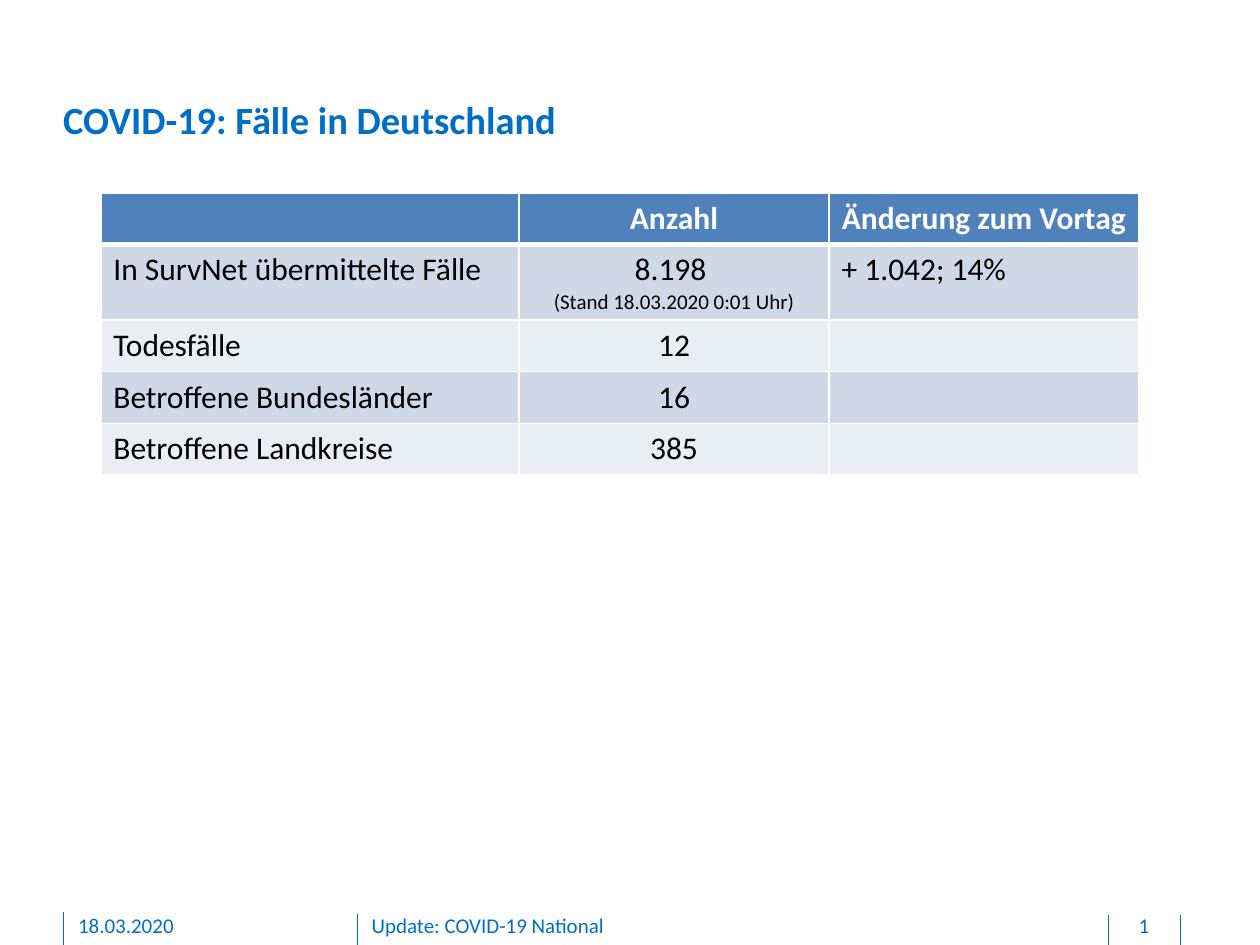
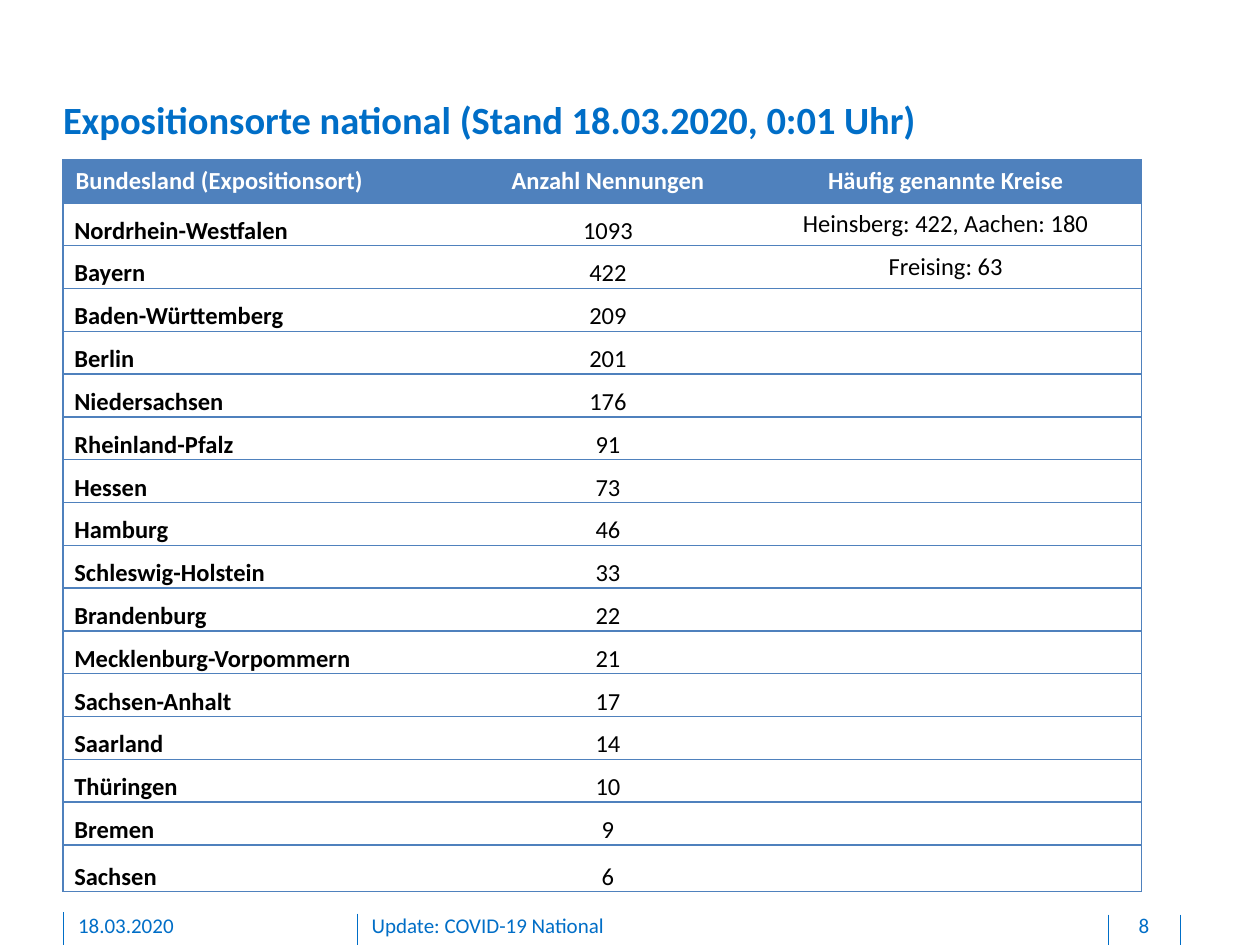
from lxml.etree import SubElement
from pptx import Presentation
from pptx.dml.color import RGBColor
from pptx.enum.shapes import MSO_CONNECTOR
from pptx.enum.text import MSO_ANCHOR, PP_ALIGN
from pptx.oxml.ns import qn
from pptx.util import Inches, Pt

FONT = "Calibri"
BLUE = RGBColor(0x00, 0x6E, 0xC7)
STEEL = RGBColor(0x4F, 0x81, 0xBD)
BAND = RGBColor(0xD0, 0xD8, 0xE8)
PALE = RGBColor(0xE9, 0xED, 0xF4)
WHITE = RGBColor(0xFF, 0xFF, 0xFF)
BLACK = RGBColor(0x00, 0x00, 0x00)
LEFT, MID = PP_ALIGN.LEFT, PP_ALIGN.CENTER
PLAIN_STYLE = "{2D5ABB26-0587-4C30-8999-92F81FD0307C}"

DATE = "18.03.2020"
TOPIC = "Update: COVID-19 National"
# x and top of each upright rule in the footer
RULES = [(0.5, 7.24), (2.84, 7.25), (8.8, 7.26), (9.37, 7.26)]

CASES = [
    ("", "Anzahl", "Änderung zum Vortag"),
    ("In SurvNet übermittelte Fälle",
     [("8.198 ", 18), ("(Stand 18.03.2020 0:01 Uhr)", 12)], "+ 1.042; 14%"),
    ("Todesfälle", "12", ""),
    ("Betroffene Bundesländer", "16", ""),
    ("Betroffene Landkreise", "385", ""),
]
PLACES = [
    ("Bundesland (Expositionsort)", "Anzahl Nennungen", "Häufig genannte Kreise"),
    ("Nordrhein-Westfalen", "1093", "Heinsberg: 422, Aachen: 180"),
    ("Bayern", "422", "Freising: 63"),
    ("Baden-Württemberg", "209", ""),
    ("Berlin", "201", ""),
    ("Niedersachsen", "176", ""),
    ("Rheinland-Pfalz", "91", ""),
    ("Hessen", "73", ""),
    ("Hamburg", "46", ""),
    ("Schleswig-Holstein", "33", ""),
    ("Brandenburg", "22", ""),
    ("Mecklenburg-Vorpommern", "21", ""),
    ("Sachsen-Anhalt", "17", ""),
    ("Saarland", "14", ""),
    ("Thüringen", "10", ""),
    ("Bremen", "9", ""),
    ("Sachsen", "6", ""),
]


def write(frame, text, size=12, color=BLUE, bold=False, align=LEFT):
    """Fill a frame with one text, or with a list of (text, size) paragraphs."""
    parts = [(text, size)] if isinstance(text, str) else text
    for i, (words, points) in enumerate(parts):
        para = frame.add_paragraph() if i else frame.paragraphs[0]
        para.alignment = align
        if not words:
            # keeps an empty cell from stretching its row
            SubElement(para._p, qn("a:endParaRPr"), sz=str(points * 100))
            continue
        run = para.add_run()
        run.text = words
        font = run.font
        font.name, font.size, font.bold = FONT, Pt(points), bold
        font.color.rgb = color


def edge(cell, **sides):
    """Draw the cell borders; each side is (colour, points) or None for no line."""
    props = cell._tc.get_or_add_tcPr()
    for side in "LRTB":
        look = sides.get(side)
        line = SubElement(props, qn(f"a:ln{side}"))
        if look:
            color, points = look
            line.set("w", str(Pt(points)))
            fill = SubElement(line, qn("a:solidFill"))
            SubElement(fill, qn("a:srgbClr"), val=str(color))
        else:
            SubElement(line, qn("a:noFill"))


def paint(cell, color):
    cell.fill.solid()
    cell.fill.fore_color.rgb = color


def pad(item, left=0, top=0, right=0, bottom=0):
    item.margin_left, item.margin_top = Inches(left), Inches(top)
    item.margin_right, item.margin_bottom = Inches(right), Inches(bottom)


class Deck:
    def __init__(self):
        self.prs = Presentation()
        self.prs.slide_width, self.prs.slide_height = Inches(10), Inches(7.5)
        self.slide = None

    def page(self, title, number):
        """Start a slide with its title and footer."""
        self.slide = self.prs.slides.add_slide(self.prs.slide_layouts[6])
        for x, top in RULES:
            self.rule(x, top, 7.5)
        self.text(title, 0.5, 0.76, 8.85, 0.37, size=22, bold=True)
        self.foot(DATE, 0.62, 2.03)
        self.foot(TOPIC, 2.95, 5.67)
        self.foot(str(number), 8.81, 0.54, align=MID)

    def rule(self, x, top, end):
        line = self.slide.shapes.add_connector(
            MSO_CONNECTOR.STRAIGHT, Inches(x), Inches(top), Inches(x), Inches(end))
        line.line.color.rgb = BLUE
        line.line.width = Pt(0.5)
        SubElement(line._element.spPr, qn("a:effectLst"))

    def text(self, text, x, y, w, h, bottom=0, **style):
        box = self.slide.shapes.add_textbox(Inches(x), Inches(y), Inches(w), Inches(h))
        frame = box.text_frame
        frame.word_wrap = True
        pad(frame, bottom=bottom)
        write(frame, text, **style)

    def foot(self, text, x, w, **style):
        self.text(text, x, 7.24, w, 0.21, bottom=0.05, **style)

    def table(self, x, y, cols, rows):
        """Add an unstyled table with the given column widths and row heights."""
        table = self.slide.shapes.add_table(
            len(rows), len(cols), Inches(x), Inches(y),
            Inches(sum(cols)), Inches(sum(rows))).table
        table.horz_banding = False
        table._tbl.tblPr.find(qn("a:tableStyleId")).text = PLAIN_STYLE
        for col, width in zip(table.columns, cols):
            col.width = Inches(width)
        for row, height in zip(table.rows, rows):
            row.height = Inches(height)
        return table

    def cases(self):
        table = self.table(0.8, 1.53, [3.32, 2.46, 2.46], [0.41, 0.6] + [0.41] * 3)
        thin, thick = (WHITE, 1), (WHITE, 3)
        for r, row in enumerate(CASES):
            head = r == 0
            for c, words in enumerate(row):
                cell = table.cell(r, c)
                edge(cell, L=thin, R=thin, T=thick if r == 1 else thin,
                     B=thick if head else thin)
                paint(cell, STEEL if head else BAND if r % 2 else PALE)
                write(cell.text_frame, words, size=18, bold=head,
                      color=WHITE if head else BLACK,
                      align=MID if head or c == 1 else LEFT)

    def places(self):
        table = self.table(0.5, 1.27, [3.2, 2.25, 3.11], [0.34] * 16 + [0.37])
        line = (STEEL, 1)
        for r, row in enumerate(PLACES):
            head = r == 0
            for c, words in enumerate(row):
                cell = table.cell(r, c)
                edge(cell, T=line, B=line, L=None if c else line,
                     R=line if c == 2 else None)
                paint(cell, STEEL if head else WHITE)
                cell.vertical_anchor = MSO_ANCHOR.MIDDLE
                if not head and c < 2:
                    cell.vertical_anchor = MSO_ANCHOR.BOTTOM
                    pad(cell, left=0 if c else 0.09)
                write(cell.text_frame, words, size=14, bold=head or c == 0,
                      color=WHITE if head else BLACK, align=MID if c else LEFT)


def main():
    deck = Deck()
    deck.page("COVID-19: Fälle in Deutschland", 1)
    deck.cases()
    deck.page("Expositionsorte national (Stand 18.03.2020, 0:01 Uhr)", 8)
    deck.places()
    deck.prs.save("out.pptx")


if __name__ == "__main__":
    main()
